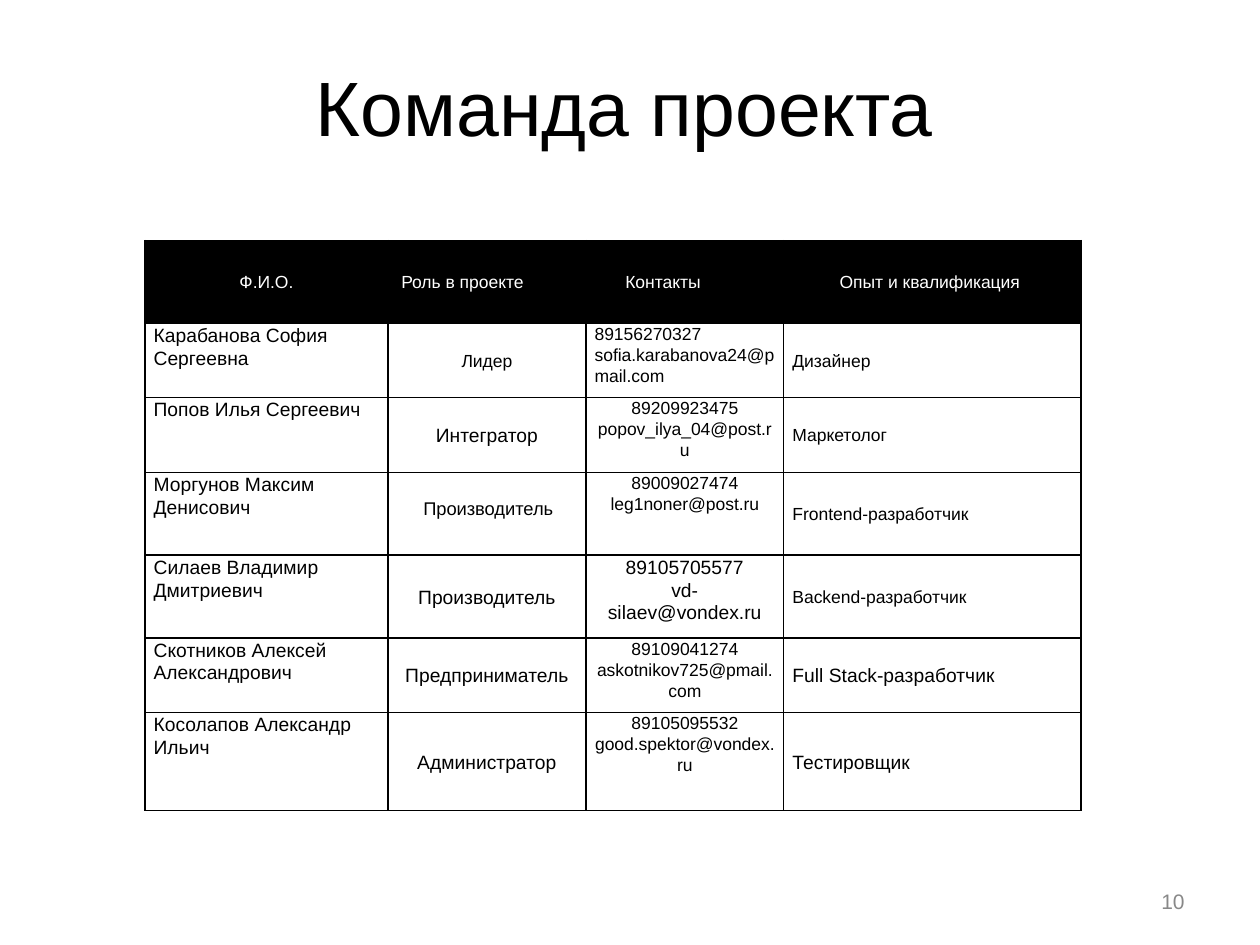
from lxml import etree
from pptx import Presentation
from pptx.dml.color import RGBColor
from pptx.enum import text
from pptx.oxml import ns
from pptx.util import Pt

COLORS = {"ink": "000000", "paper": "FFFFFF", "muted": "888888"}
FONT = "Arial"
LEFT, CENTER, RIGHT = text.PP_ALIGN.LEFT, text.PP_ALIGN.CENTER, text.PP_ALIGN.RIGHT
TOP, MIDDLE = text.MSO_ANCHOR.TOP, text.MSO_ANCHOR.MIDDLE

COLUMN_WIDTHS = [138.9, 113.1, 113.1, 169.9]
ROW_HEIGHTS = [47.2, 42.6, 42.6, 47.4, 47.4, 42.6, 56]
# Heading and right cell margin; the wider margins move a heading left.
HEADINGS = [("Ф.И.О.", 5), ("Роль в проекте", 33), ("Контакты", 30),
            ("Опыт и квалификация", 8)]
# Name, then role, contacts and experience, each with its text size.
TEAM = [
    ("Карабанова София Сергеевна", ("Лидер", 10),
     ("89156270327\nsofia.karabanova24@pmail.com", 10), ("Дизайнер", 10)),
    ("Попов Илья Сергеевич", ("Интегратор", 11),
     ("89209923475\npopov_ilya_04@post.ru", 10), ("Маркетолог", 10)),
    ("Моргунов Максим Денисович", ("", 11),
     ("89009027474\nleg1noner@post.ru", 10), ("Frontend-разработчик", 10)),
    ("Силаев Владимир Дмитриевич", ("Производитель", 11),
     ("89105705577\nvd-silaev@vondex.ru", 11), ("Backend-разработчик", 10)),
    ("Скотников Алексей Александрович", ("Предприниматель", 11),
     ("89109041274\naskotnikov725@pmail.com", 10), ("Full Stack-разработчик", 11)),
    ("Косолапов Александр Ильич", ("Администратор", 11),
     ("89105095532\ngood.spektor@vondex.ru", 10), ("Тестировщик", 11)),
]


def write(frame, content, size, color="ink", align=LEFT, spacing=None):
    frame.text = content
    for para in frame.paragraphs:
        para.alignment = align
        if spacing:
            para.line_spacing = spacing
        para.font.size = Pt(size)
        para.font.name = FONT
        para.font.color.rgb = RGBColor.from_string(COLORS[color])


def add_title(page, left, top, width, height):
    title = page.shapes.title
    title.left, title.top, title.width, title.height = map(Pt, (left, top, width, height))
    title.text_frame.vertical_anchor = MIDDLE
    write(title.text_frame, "Команда проекта", 44, align=CENTER)


def add_label(page, left, top, width, height, content, wrap=True, anchor=TOP, **style):
    box = page.shapes.add_textbox(Pt(left), Pt(top), Pt(width), Pt(height))
    box.text_frame.word_wrap = wrap
    box.text_frame.vertical_anchor = anchor
    write(box.text_frame, content, **style)


def add_borders(cell):
    properties = cell._tc.get_or_add_tcPr()
    for side in ("lnL", "lnR", "lnT", "lnB"):
        line = etree.SubElement(properties, ns.qn("a:" + side), w=str(Pt(1)))
        fill = etree.SubElement(line, ns.qn("a:solidFill"))
        etree.SubElement(fill, ns.qn("a:srgbClr"), val=COLORS["ink"])


def fill_cell(cell, content, size, fill=None, anchor=TOP, margin_right=5, **style):
    add_borders(cell)
    if fill:
        cell.fill.solid()
        cell.fill.fore_color.rgb = RGBColor.from_string(COLORS[fill])
    else:
        cell.fill.background()
    cell.margin_left, cell.margin_right = Pt(5), Pt(margin_right)
    cell.margin_top = cell.margin_bottom = 0
    cell.vertical_anchor = anchor
    write(cell.text_frame, content, size, spacing=1.07, **style)


def add_team_table(page, left, top):
    table = page.shapes.add_table(
        len(ROW_HEIGHTS), len(COLUMN_WIDTHS), Pt(left), Pt(top),
        Pt(sum(COLUMN_WIDTHS)), Pt(sum(ROW_HEIGHTS))).table
    table.horz_banding = table.first_row = False
    for column, width in zip(table.columns, COLUMN_WIDTHS):
        column.width = Pt(width)
    for row, height in zip(table.rows, ROW_HEIGHTS):
        row.height = Pt(height)

    for column, (heading, margin) in enumerate(HEADINGS):
        fill_cell(table.cell(0, column), heading, 10, fill="ink", color="paper",
                  anchor=MIDDLE, align=CENTER, margin_right=margin)
    for row, (name, role, contacts, experience) in enumerate(TEAM, start=1):
        fill_cell(table.cell(row, 0), name, 11)
        fill_cell(table.cell(row, 1), *role, anchor=MIDDLE, align=CENTER)
        fill_cell(table.cell(row, 2), *contacts, align=LEFT if row == 1 else CENTER)
        fill_cell(table.cell(row, 3), *experience, anchor=MIDDLE)

    # The third member's role stands in a box of its own over the cell.
    add_label(page, left + 152, top + 143.3, 92.2, 20.2, "Производитель",
              wrap=False, size=10.5)


def main():
    deck = Presentation()
    deck.slide_width, deck.slide_height = Pt(720), Pt(540)
    page = deck.slides.add_slide(deck.slide_layouts[5])
    add_title(page, 33, -6, 648, 132.5)
    add_label(page, 516, 500.5, 168, 28.75, "10", anchor=MIDDLE, size=12,
              color="muted", align=RIGHT)
    add_team_table(page, 82.8, 137.5)
    deck.save("out.pptx")


if __name__ == "__main__":
    main()
